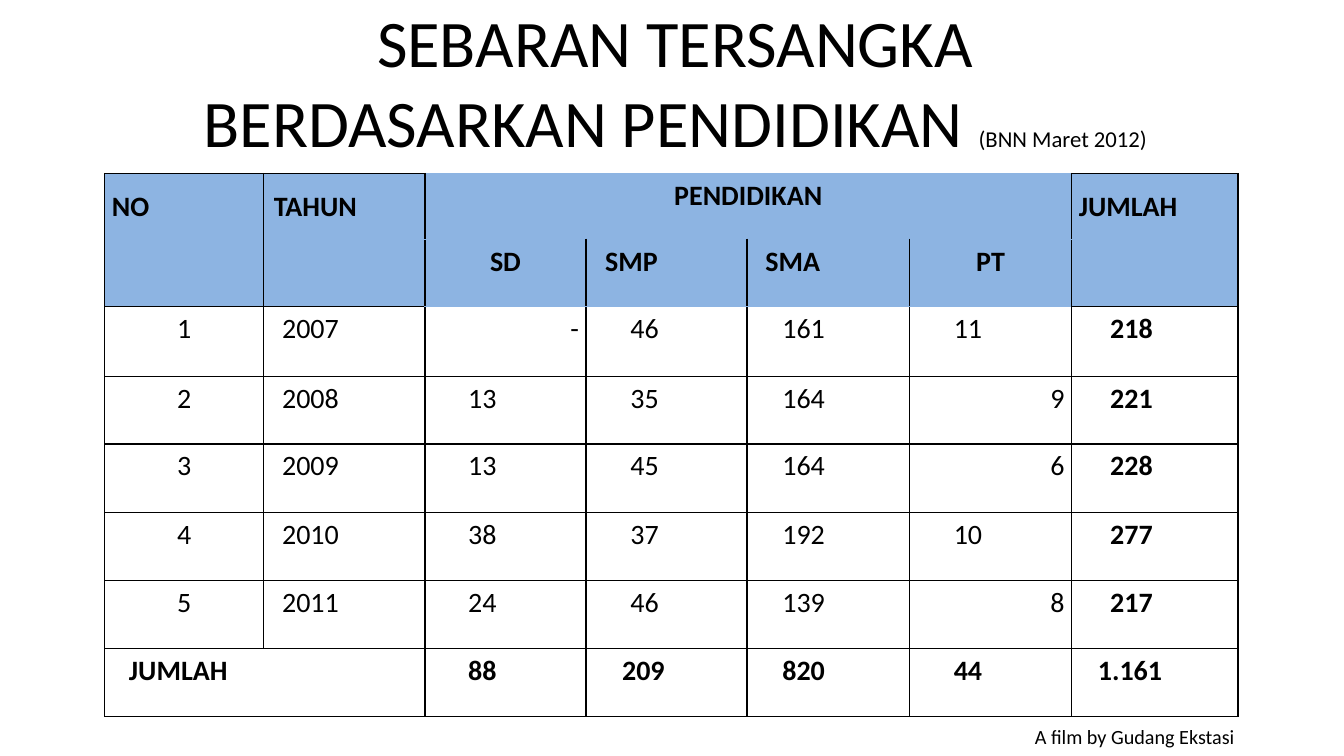
from dataclasses import dataclass

from lxml import etree
from pptx import Presentation
from pptx.dml.color import RGBColor
from pptx.enum.text import MSO_ANCHOR, MSO_AUTO_SIZE, PP_ALIGN
from pptx.oxml.ns import qn
from pptx.util import Cm, Pt

LEFT, CENTER, RIGHT = PP_ALIGN.LEFT, PP_ALIGN.CENTER, PP_ALIGN.RIGHT
TOP, MIDDLE = MSO_ANCHOR.TOP, MSO_ANCHOR.MIDDLE
FIT_SHAPE = MSO_AUTO_SIZE.SHAPE_TO_FIT_TEXT

# Content
TITLE = "SEBARAN TERSANGKA BERDASARKAN PENDIDIKAN "
SOURCE = "(BNN Maret 2012)"
CREDIT = "A film by Gudang Ekstasi"

# Tall headings span both header rows: column, text, indent
TALL_HEADINGS = [(0, "NO", 0.18), (1, "TAHUN", 0.25), (6, "JUMLAH", 0.18)]
GROUP_HEADING = "PENDIDIKAN"
# Education levels: text, alignment, indent
LEVELS = [("SD", CENTER, 0), ("SMP", LEFT, 0.48), ("SMA", LEFT, 0.46), ("PT", CENTER, 0)]
YEARS = [
    ("1", "2007", "-", "46", "161", "11", "218"),
    ("2", "2008", "13", "35", "164", "9", "221"),
    ("3", "2009", "13", "45", "164", "6", "228"),
    ("4", "2010", "38", "37", "192", "10", "277"),
    ("5", "2011", "24", "46", "139", "8", "217"),
]
TOTALS = ("JUMLAH", None, "88", "209", "820", "44", "1.161")

# Table measures in cm
COLUMN_WIDTHS = [4.01, 4.06, 4.06, 4.06, 4.09, 4.09, 4.19]
ROW_HEIGHTS = [1.66, 1.69, 1.76, 1.71, 1.73, 1.71, 1.71, 1.71]
YEAR_INDENTS = [0, 0.46, 1.09, 1.12, 0.89, 1.12, 0.97]
TOTAL_INDENTS = [0.61, 0, 1.09, 0.91, 0.89, 1.12, 0.66]
RIGHT_INDENT = 0.18
TALL_HEADING_DROP = 0.28
FIRST_LEVEL, LAST_LEVEL = 2, 5
HEADER_ROWS = 2


@dataclass(frozen=True)
class Theme:
    font: str = "Calibri"
    ink: str = "000000"
    header: str = "8DB4E2"
    title_size: float = 47.5
    source_size: float = 16.2
    table_size: float = 20
    credit_size: float = 14.4
    border: float = 1


THEME = Theme()


def add_run(paragraph, text, size, bold=False):
    run = paragraph.add_run()
    run.text = text
    run.font.name = THEME.font
    run.font.size = Pt(size)
    run.font.bold = bold
    run.font.color.rgb = RGBColor.from_string(THEME.ink)


def write_cell(cell, text, align=LEFT, indent=0, bold=False, drop=0):
    cell.margin_left = Cm(indent)
    cell.margin_right = Cm(RIGHT_INDENT if align == RIGHT else 0)
    cell.margin_top, cell.margin_bottom = Cm(drop), Cm(0)
    cell.vertical_anchor = TOP
    paragraph = cell.text_frame.paragraphs[0]
    paragraph.alignment = align
    paragraph.line_spacing = 1.15
    paragraph.space_before = Pt(0.6)
    add_run(paragraph, text, THEME.table_size, bold)


def style_cell(cell, row, column):
    in_header = row < HEADER_ROWS
    in_levels = FIRST_LEVEL <= column <= LAST_LEVEL
    top = THEME.header if in_levels and row <= HEADER_ROWS else THEME.ink
    bottom = THEME.header if in_levels and in_header else THEME.ink
    properties = cell._tc.get_or_add_tcPr()
    edges = [("a:lnL", THEME.ink), ("a:lnR", THEME.ink), ("a:lnT", top), ("a:lnB", bottom)]
    for tag, color in edges:
        line = etree.SubElement(properties, qn(tag), w=str(Pt(THEME.border)))
        fill = etree.SubElement(line, qn("a:solidFill"))
        etree.SubElement(fill, qn("a:srgbClr"), val=color)
    if in_header:
        cell.fill.solid()
        cell.fill.fore_color.rgb = RGBColor.from_string(THEME.header)
    else:
        cell.fill.background()


def add_title(slide):
    frame = slide.shapes.add_textbox(Cm(4.06), Cm(0), Cm(25.91), Cm(4.09)).text_frame
    frame.word_wrap = True
    frame.vertical_anchor = MIDDLE
    frame.margin_left = frame.margin_right = Cm(0.4)
    paragraph = frame.paragraphs[0]
    paragraph.alignment = CENTER
    add_run(paragraph, TITLE, THEME.title_size)
    add_run(paragraph, SOURCE, THEME.source_size)


def add_suspects_table(slide):
    table = slide.shapes.add_table(
        len(ROW_HEIGHTS), len(COLUMN_WIDTHS), Cm(2.64), Cm(4.37),
        Cm(sum(COLUMN_WIDTHS)), Cm(sum(ROW_HEIGHTS))).table
    table.first_row = table.horz_banding = False
    for column, width in zip(table.columns, COLUMN_WIDTHS):
        column.width = Cm(width)
    for row, height in zip(table.rows, ROW_HEIGHTS):
        row.height = Cm(height)
    for r in range(len(ROW_HEIGHTS)):
        for c in range(len(COLUMN_WIDTHS)):
            style_cell(table.cell(r, c), r, c)

    # Header
    for c, heading, indent in TALL_HEADINGS:
        table.cell(0, c).merge(table.cell(1, c))
        write_cell(table.cell(0, c), heading, LEFT, indent, True, TALL_HEADING_DROP)
    table.cell(0, FIRST_LEVEL).merge(table.cell(0, LAST_LEVEL))
    write_cell(table.cell(0, FIRST_LEVEL), GROUP_HEADING, CENTER, bold=True)
    for c, (level, align, indent) in enumerate(LEVELS, FIRST_LEVEL):
        write_cell(table.cell(1, c), level, align, indent, True)

    # Years: one-character counts sit at the right edge
    for r, year in enumerate(YEARS, HEADER_ROWS):
        for c, value in enumerate(year):
            align, indent = LEFT, YEAR_INDENTS[c]
            if c == 0:
                align = CENTER
            elif len(value) == 1:
                align, indent = RIGHT, 0
            write_cell(table.cell(r, c), value, align, indent, c == len(year) - 1)

    # Totals
    last = len(ROW_HEIGHTS) - 1
    table.cell(last, 0).merge(table.cell(last, 1))
    for c, total in enumerate(TOTALS):
        if total:
            write_cell(table.cell(last, c), total, LEFT, TOTAL_INDENTS[c], True)


def add_credit(slide):
    frame = slide.shapes.add_textbox(Cm(25.83), Cm(18.14), Cm(5.59), Cm(0.86)).text_frame
    frame.word_wrap = False
    frame.auto_size = FIT_SHAPE
    add_run(frame.paragraphs[0], CREDIT, THEME.credit_size)


def main():
    deck = Presentation()
    deck.slide_width, deck.slide_height = Cm(33.87), Cm(19.05)
    slide = deck.slides.add_slide(deck.slide_layouts[6])
    add_title(slide)
    add_suspects_table(slide)
    add_credit(slide)
    deck.save("out.pptx")


if __name__ == "__main__":
    main()
